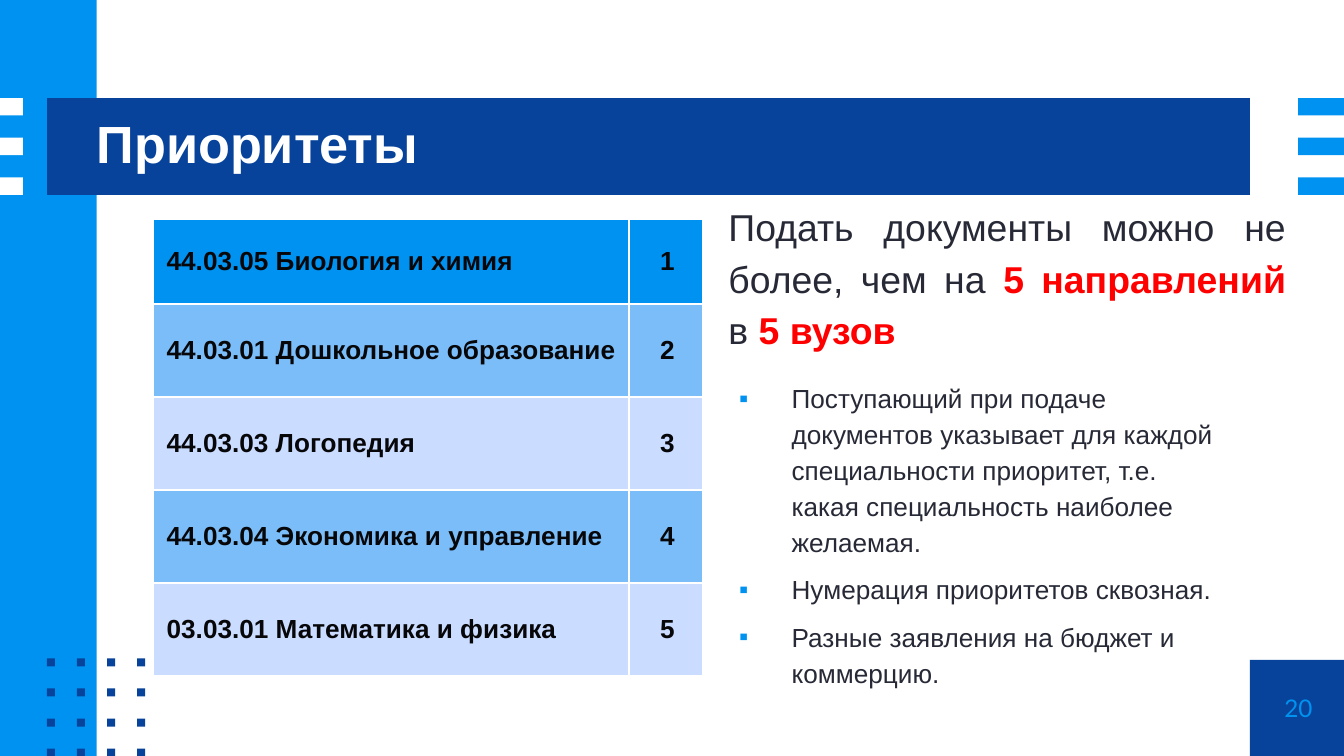
from lxml.etree import SubElement
from pptx import Presentation
from pptx.dml.color import RGBColor
from pptx.enum.shapes import MSO_SHAPE
from pptx.enum.text import MSO_ANCHOR, MSO_AUTO_SIZE, PP_ALIGN
from pptx.oxml.ns import qn
from pptx.util import Inches, Pt

WIDTH = 10
HEIGHT = WIDTH * 9 / 16

WHITE = RGBColor(0xFF, 0xFF, 0xFF)
NAVY = RGBColor(0x07, 0x43, 0x9B)
BLUE = RGBColor(0x00, 0x92, 0xF0)
BAND = RGBColor(0x7A, 0xBD, 0xF9)
PALE = RGBColor(0xCA, 0xDC, 0xFF)
BLACK = RGBColor(0x07, 0x07, 0x09)
INK = RGBColor(0x27, 0x2A, 0x36)
RED = RGBColor(0xFF, 0x00, 0x00)

PROGRAMS = [
    "44.03.05 Биология и химия",
    "44.03.01 Дошкольное образование",
    "44.03.03 Логопедия",
    "44.03.04 Экономика и управление",
    "03.03.01 Математика и физика",
]
ROW_FILLS = [BLUE, BAND, PALE, BAND, PALE]
LIMITS = [
    ("Подать документы можно не более, чем на ", INK, False),
    ("5 направлений", RED, True),
    (" в ", INK, False),
    ("5 вузов", RED, True),
]
NOTES = [
    "Поступающий при подаче документов указывает для каждой специальности "
    "приоритет, т.е. какая специальность наиболее желаемая.",
    "Нумерация приоритетов сквозная.",
    "Разные заявления на бюджет и коммерцию.",
]


class Deck:
    def __init__(self, width, height, font="Arial"):
        self.prs = Presentation()
        self.prs.slide_width, self.prs.slide_height = Inches(width), Inches(height)
        self.slide = self.prs.slides.add_slide(self.prs.slide_layouts[5])
        self.shapes = self.slide.shapes
        self.font = font

    def rect(self, x, y, w, h, color):
        sp = self.shapes.add_shape(MSO_SHAPE.RECTANGLE, *map(Inches, (x, y, w, h)))
        sp.shadow.inherit = False
        sp.fill.solid()
        sp.fill.fore_color.rgb = color
        sp.line.fill.background()

    def run(self, p, text, size, color, bold=False, font=None):
        r = p.add_run()
        r.text = text
        r.font.name = font or self.font
        r.font.size = Pt(size)
        r.font.bold = bold
        r.font.color.rgb = color

    def frame(self, sp, anchor=MSO_ANCHOR.TOP):
        """Strip the insets of a text shape and return its text frame."""
        tf = sp.text_frame
        tf.word_wrap = True
        tf.auto_size = MSO_AUTO_SIZE.NONE
        tf.vertical_anchor = anchor
        tf.margin_left = tf.margin_top = tf.margin_right = tf.margin_bottom = 0
        return tf

    def title(self, x, y, w, h, text):
        sp = self.shapes.title
        sp.left, sp.top, sp.width, sp.height = map(Inches, (x, y, w, h))
        self.shapes._spTree.append(sp._element)  # in front of the bar
        p = self.frame(sp, MSO_ANCHOR.MIDDLE).paragraphs[0]
        p.alignment = PP_ALIGN.LEFT
        p.line_spacing = 0.9
        self.run(p, text, 28, WHITE, bold=True)

    def text(self, x, y, w, h, anchor=MSO_ANCHOR.TOP):
        return self.frame(self.shapes.add_textbox(*map(Inches, (x, y, w, h))), anchor)

    def body_paragraph(self, tf, first, indent=0.0):
        p = tf.paragraphs[0] if first else tf.add_paragraph()
        p.line_spacing = 1.15
        p.space_before = Pt(6)
        pPr = p._p.get_or_add_pPr()
        pPr.set("marL", str(Inches(0.5)))
        pPr.set("indent", str(Inches(indent)))
        return p

    def bullets(self, x, y, w, h, items):
        tf = self.text(x, y, w, h)
        for i, item in enumerate(items):
            p = self.body_paragraph(tf, i == 0, indent=-0.39)
            pPr = p._p.get_or_add_pPr()
            SubElement(SubElement(pPr, qn("a:buClr")), qn("a:srgbClr"), val=str(BLUE))
            SubElement(pPr, qn("a:buFont"), typeface=self.font)
            SubElement(pPr, qn("a:buChar"), char="▪")
            self.run(p, item, 14, INK)

    def cell(self, cell, text, fill, align):
        tcPr = cell._tc.get_or_add_tcPr()
        for side in ("lnL", "lnR", "lnT", "lnB"):
            ln = SubElement(tcPr, qn("a:" + side), w=str(Pt(1)))
            SubElement(SubElement(ln, qn("a:solidFill")), qn("a:srgbClr"), val=str(WHITE))
        cell.fill.solid()
        cell.fill.fore_color.rgb = fill
        cell.vertical_anchor = MSO_ANCHOR.MIDDLE
        cell.margin_left, cell.margin_right = Inches(0.1), Inches(0.08)
        p = cell.text_frame.paragraphs[0]
        p.alignment = align
        self.run(p, text, 14, BLACK, bold=True)

    def table(self, x, y, widths, heights, names, fills):
        """Number the names in order, one row each."""
        box = map(Inches, (x, y, sum(widths), sum(heights)))
        tbl = self.shapes.add_table(len(names), len(widths), *box).table
        for col, w in zip(tbl.columns, widths):
            col.width = Inches(w)
        for i, (name, fill) in enumerate(zip(names, fills)):
            tbl.rows[i].height = Inches(heights[i])
            self.cell(tbl.cell(i, 0), name, fill, PP_ALIGN.LEFT)
            self.cell(tbl.cell(i, 1), str(i + 1), fill, PP_ALIGN.CENTER)


def main():
    deck = Deck(WIDTH, HEIGHT)
    deck.rect(9.3, 4.91, 0.72, 0.72, NAVY)
    deck.rect(0, 0, 0.72, HEIGHT, BLUE)
    deck.rect(0.35, 0.73, 8.95, 0.72, NAVY)
    for i in range(3):
        y = 0.73 + 0.59 / 2 * i
        deck.rect(0, y, 0.17, 0.13, WHITE)
        deck.rect(9.66, y, 0.34, 0.13, BLUE)
    dot_step = 0.67 / 3
    for row in range(4):
        for col in range(4):
            deck.rect(0.35 + dot_step * col, 4.9 + dot_step * row, 0.06, 0.06, NAVY)

    deck.title(0.72, 0.73, 8.58, 0.72, "Приоритеты")
    deck.bullets(5.39, 2.81, 3.77, 2.52, NOTES)

    p = deck.text(9.3, 4.91, 0.72, 0.72, MSO_ANCHOR.MIDDLE).paragraphs[0]
    p.alignment = PP_ALIGN.CENTER
    deck.run(p, "20", 13, BLUE, font="Lato")

    row_height = (3.4 - 0.63) / 4
    deck.table(1.14, 1.63, [3.54, 0.55], [0.63] + [row_height] * 4, PROGRAMS, ROW_FILLS)

    p = deck.body_paragraph(deck.text(4.92, 1.47, 4.65, 1.18), first=True)
    p.alignment = PP_ALIGN.JUSTIFY
    for text, color, bold in LIMITS:
        deck.run(p, text, 20, color, bold)

    deck.prs.save("out.pptx")


if __name__ == "__main__":
    main()
